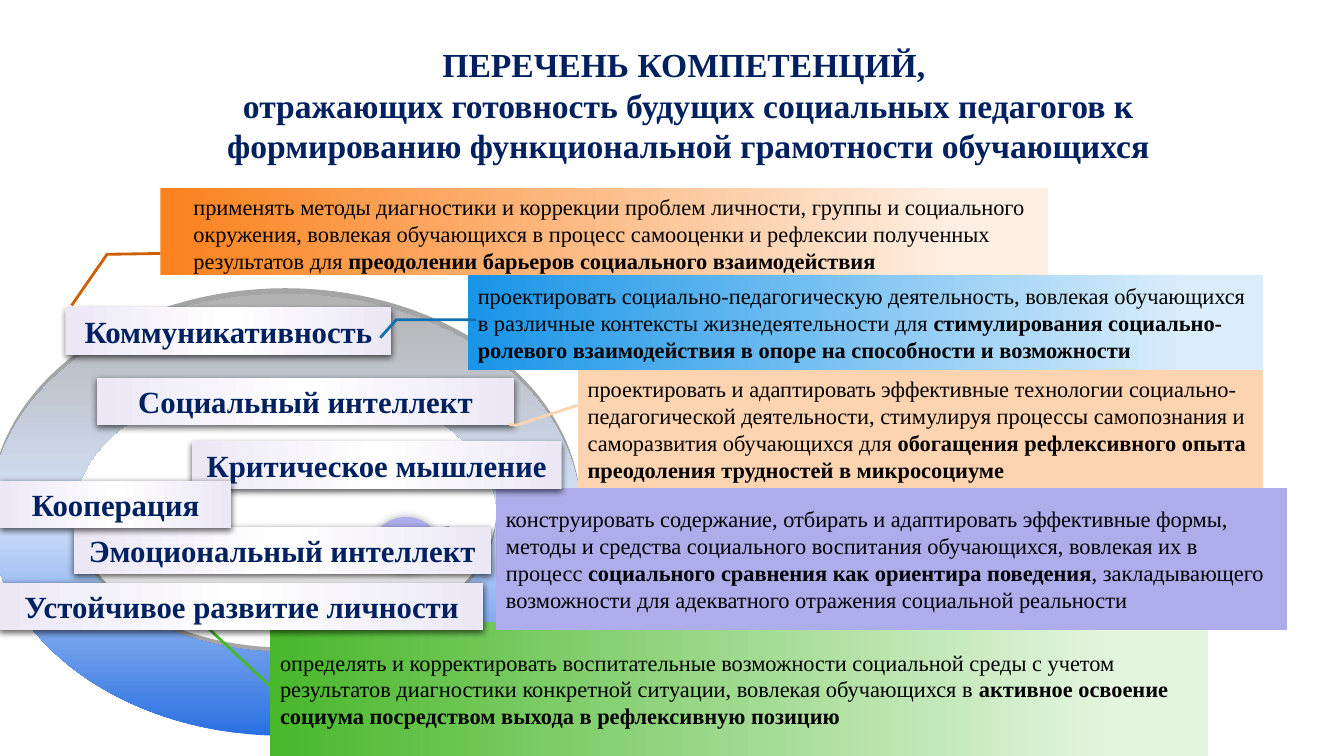
from dataclasses import dataclass

from lxml.etree import SubElement
from pptx import Presentation as NewPresentation
from pptx.dml.color import RGBColor
from pptx.enum.shapes import MSO_SHAPE as Preset
from pptx.enum.text import MSO_ANCHOR as Anchor, MSO_AUTO_SIZE as AutoSize, PP_ALIGN as Align
from pptx.oxml.ns import qn
from pptx.util import Inches, Pt

NAVY = RGBColor(0x00, 0x20, 0x60)
BLACK = RGBColor(0x00, 0x00, 0x00)
WHITE = RGBColor(0xFF, 0xFF, 0xFF)
GREEN = RGBColor(0x49, 0xB7, 0x2B)
PALE_GREEN = RGBColor(0xE4, 0xF5, 0xDF)
LILAC = RGBColor(0xAD, 0xAD, 0xEB)
PURPLE = RGBColor(0x94, 0x48, 0xBE)
ORANGE = RGBColor(0xFB, 0x81, 0x1D)
PALE_ORANGE = RGBColor(0xFD, 0xEF, 0xE3)
RUST = RGBColor(0xCE, 0x5F, 0x04)
BLUE = RGBColor(0x18, 0x94, 0xE8)
PALE_BLUE = RGBColor(0xD9, 0xED, 0xFB)
DARK_BLUE = RGBColor(0x11, 0x6F, 0xAF)
PEACH = RGBColor(0xFE, 0xD3, 0xB0)
LAVENDER = RGBColor(0xEB, 0xE7, 0xF5)
RING_BLUE = RGBColor(0x2A, 0x70, 0xE2)
RING_PALE = RGBColor(0xD4, 0xE2, 0xF9)
RING_GREY = RGBColor(0xB2, 0xB2, 0xB2)
RIM_GREY = RGBColor(0xA5, 0xA5, 0xA5)

CELL = Inches(0.1)
LABEL_ROWS = 4.7
FONT = "Times New Roman"
BODY = {"name": FONT, "size": Pt(16)}
LABEL = {"name": FONT, "size": Pt(22)}
TITLE = {"name": FONT, "size": Pt(24)}


@dataclass(frozen=True)
class Area:
    column: float
    row: float
    columns: float
    rows: float

    def lengths(self) -> list[int]:
        return [int(CELL * cells) for cells in (self.column, self.row, self.columns, self.rows)]


@dataclass(frozen=True)
class Shadow:
    opacity: int
    blur: float
    distance: float
    angle: int


@dataclass(frozen=True)
class Figure:
    area: Area
    preset: Preset
    stops: tuple
    angle: int = 0
    adjustments: tuple = ()
    line: RGBColor | None = None
    shadow: Shadow | None = None


@dataclass(frozen=True)
class Words:
    paragraphs: tuple
    format: dict
    color: RGBColor = BLACK
    align: Align = Align.LEFT
    anchor: Anchor = Anchor.TOP
    grow: bool = True


def write(shape, words: Words) -> None:
    frame = shape.text_frame
    frame.word_wrap = True
    frame.vertical_anchor = words.anchor
    frame.auto_size = AutoSize.SHAPE_TO_FIT_TEXT if words.grow else AutoSize.NONE
    for index, runs in enumerate(words.paragraphs):
        paragraph = frame.add_paragraph() if index else frame.paragraphs[0]
        paragraph.alignment = words.align
        for text, bold in runs:
            run = paragraph.add_run()
            run.text = text
            for name, value in {**words.format, "bold": bold}.items():
                setattr(run.font, name, value)
            run.font.color.rgb = words.color


def paint(shape, stops: tuple, angle: int) -> None:
    if len(stops) == 1:
        shape.fill.solid()
        shape.fill.fore_color.rgb = stops[0][1]
        return
    shape.fill.gradient()
    shape.fill.gradient_angle = angle
    stop_list = next(shape.element.spPr.iter(qn("a:gsLst")))
    for old_stop in list(stop_list):
        stop_list.remove(old_stop)
    for percent, color in stops:
        stop = SubElement(stop_list, qn("a:gs"), pos=str(percent * 1000))
        SubElement(stop, qn("a:srgbClr"), val=str(color))


def cast(shape, shadow: Shadow) -> None:
    effects = shape.element.spPr.find(qn("a:effectLst"))
    outer = SubElement(effects, qn("a:outerShdw"), blurRad=str(Pt(shadow.blur)),
                       dist=str(Pt(shadow.distance)), dir=str(shadow.angle * 60000),
                       algn="ctr", rotWithShape="0")
    color = SubElement(outer, qn("a:srgbClr"), val=str(BLACK))
    SubElement(color, qn("a:alpha"), val=str(shadow.opacity * 1000))


def draw(slide, figure: Figure, words: Words | None = None) -> None:
    shape = slide.shapes.add_shape(figure.preset, *figure.area.lengths())
    for index, value in enumerate(figure.adjustments):
        shape.adjustments[index] = value
    paint(shape, figure.stops, figure.angle)
    if figure.line is None:
        shape.line.fill.background()
    else:
        shape.line.color.rgb = figure.line
        shape.line.width = Pt(2)
    shape.shadow.inherit = False
    if figure.shadow:
        cast(shape, figure.shadow)
    if words:
        write(shape, words)


def callout(area: Area, stops: tuple, line: RGBColor, adjustments: tuple) -> Figure:
    return Figure(area, Preset.LINE_CALLOUT_2_NO_BORDER, stops, 0, adjustments, line)


def body(*runs: tuple) -> Words:
    return Words((runs,), BODY, anchor=Anchor.MIDDLE, grow=False)


def label(column: float, row: float, columns: float, text: str) -> tuple[Figure, Words]:
    figure = Figure(Area(column, row, columns, LABEL_ROWS), Preset.RECTANGLE,
                    ((0, LAVENDER), (50, WHITE), (100, LAVENDER)), shadow=Shadow(63, 4.5, 1.5, 90))
    return figure, Words((((text, True),),), LABEL, NAVY, Align.CENTER)


FIGURES = (
    (Figure(Area(-1, 28.6, 58.6, 44), Preset.DONUT, ((0, RIM_GREY),), adjustments=(0.19,)), None),
    (Figure(Area(-1, 29.2, 58.6, 43.8), Preset.DONUT,
            ((0, RING_BLUE), (50, RING_PALE), (100, RING_GREY)), 90, (0.19,)), None),
    (callout(Area(26.8, 61.7, 93, 13.3), ((0, GREEN), (90, PALE_GREEN)), GREEN,
             (0.48, 0, -0.11, -0.09, -0.11, -0.19)),
     body(("определять и корректировать воспитательные возможности социальной среды с учетом "
           "результатов диагностики конкретной ситуации, вовлекая обучающихся в ", False),
          ("активное освоение социума посредством выхода в рефлексивную позицию", True))),
    (callout(Area(49.2, 48.4, 78.4, 14.1), ((0, LILAC),), PURPLE,
             (0.55, -0.01, 0.28, -0.06, 0.33, -0.13)),
     body(("конструировать содержание, отбирать и адаптировать эффективные формы, методы и средства "
           "социального воспитания обучающихся, вовлекая их в процесс ", False),
          ("социального сравнения как ориентира поведения", True),
          (", закладывающего возможности для адекватного отражения социальной реальности", False))),
    (Figure(Area(37, 51.3, 6.5, 5.6), Preset.OVAL, ((0, LILAC),), shadow=Shadow(30, 6, 0, 315)), None),
    (callout(Area(15.9, 18.7, 88, 8.6), ((0, ORANGE), (90, PALE_ORANGE)), RUST,
             (0.75, 0, 0.76, -0.06, 1.35, -0.1)), None),
    label(9.6, 37.5, 41.4, "Социальный интеллект"),
    label(6.5, 30.5, 32.3, "Коммуникативность"),
    label(7.3, 52.3, 41.4, "Эмоциональный интеллект"),
    (callout(Area(46.4, 27.3, 78.9, 9.4), ((0, BLUE), (90, PALE_BLUE)), DARK_BLUE,
             (0.47, 0.01, 0.47, -0.09, 0.66, -0.11)),
     body(("проектировать социально-педагогическую деятельность, вовлекая обучающихся в различные "
           "контексты жизнедеятельности для ", False),
          ("стимулирования социально-ролевого взаимодействия в опоре на способности и возможности", True))),
    (callout(Area(57.3, 36.7, 68, 11.7), ((0, PEACH),), PEACH,
             (0.3, 0, 0.47, -0.09, 0.46, -0.1)),
     body(("проектировать и адаптировать эффективные технологии социально-педагогической деятельности, "
           "стимулируя процессы самопознания и саморазвития обучающихся для ", False),
          ("обогащения рефлексивного опыта преодоления трудностей в микросоциуме", True))),
    label(19, 43.8, 36.7, "Критическое мышление"),
    label(0, 57.8, 47.9, "Устойчивое развитие личности"),
    label(0, 47.7, 22.9, "Кооперация"),
)

TEXTS = (
    (Area(19.8, 3.9, 96.9, 13.1),
     Words(((("ПЕРЕЧЕНЬ КОМПЕТЕНЦИЙ, ", True),),
            (("отражающих готовность будущих социальных педагогов к формированию "
              "функциональной грамотности обучающихся", True),)), TITLE, NAVY, Align.CENTER)),
    (Area(18.2, 18.7, 88.3, 9.1),
     Words(((("применять методы диагностики и коррекции проблем личности, группы и социального "
              "окружения, вовлекая обучающихся в процесс самооценки и рефлексии полученных "
              "результатов для ", False),
             ("преодолении барьеров социального взаимодействия", True)),), BODY)),
)


def main() -> None:
    presentation = NewPresentation()
    presentation.slide_width, presentation.slide_height = Inches(13.33), Inches(7.5)
    slide = presentation.slides.add_slide(presentation.slide_layouts[6])
    for figure, words in FIGURES:
        draw(slide, figure, words)
    for area, words in TEXTS:
        write(slide.shapes.add_textbox(*area.lengths()), words)
    presentation.save("out.pptx")


if __name__ == "__main__":
    main()
